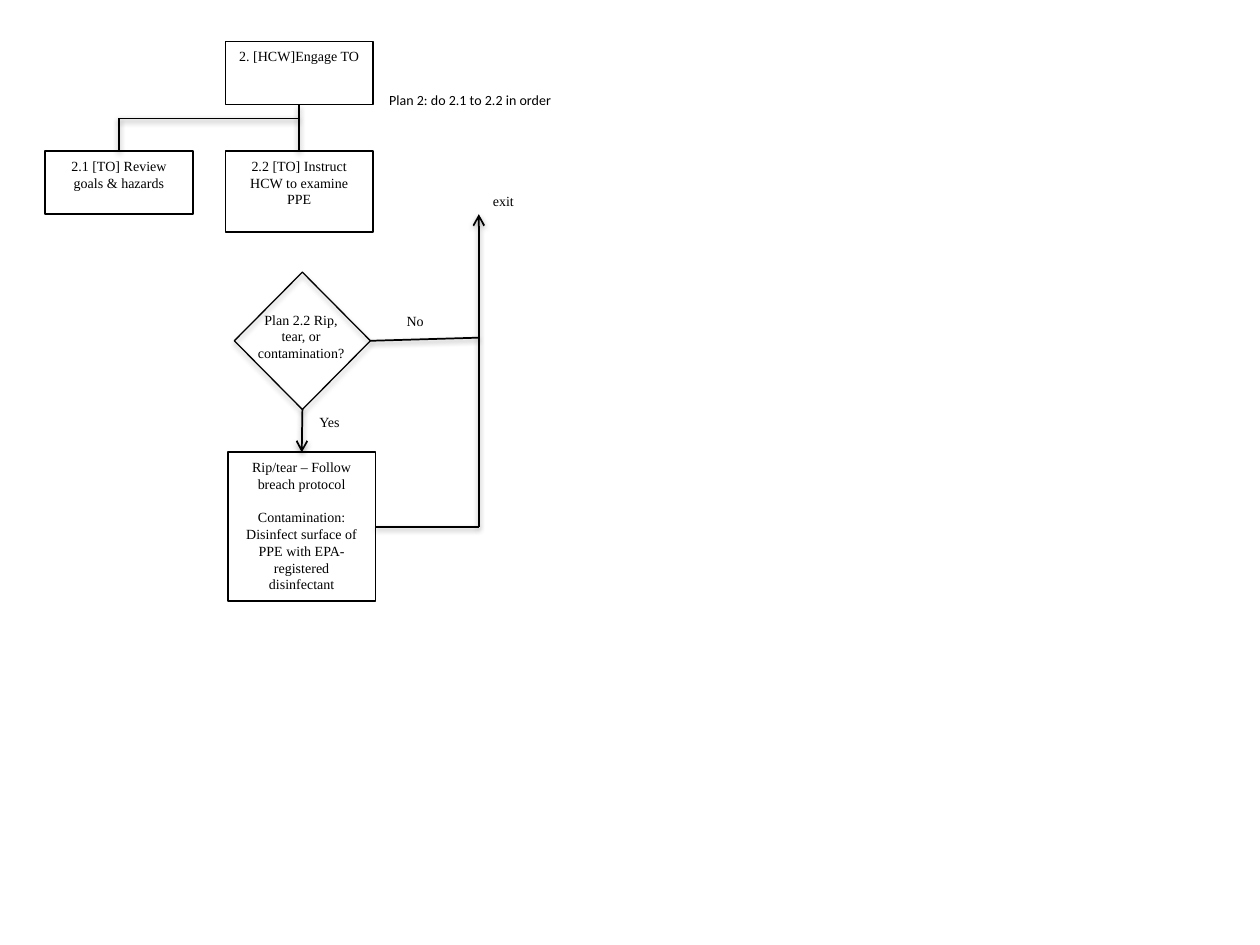
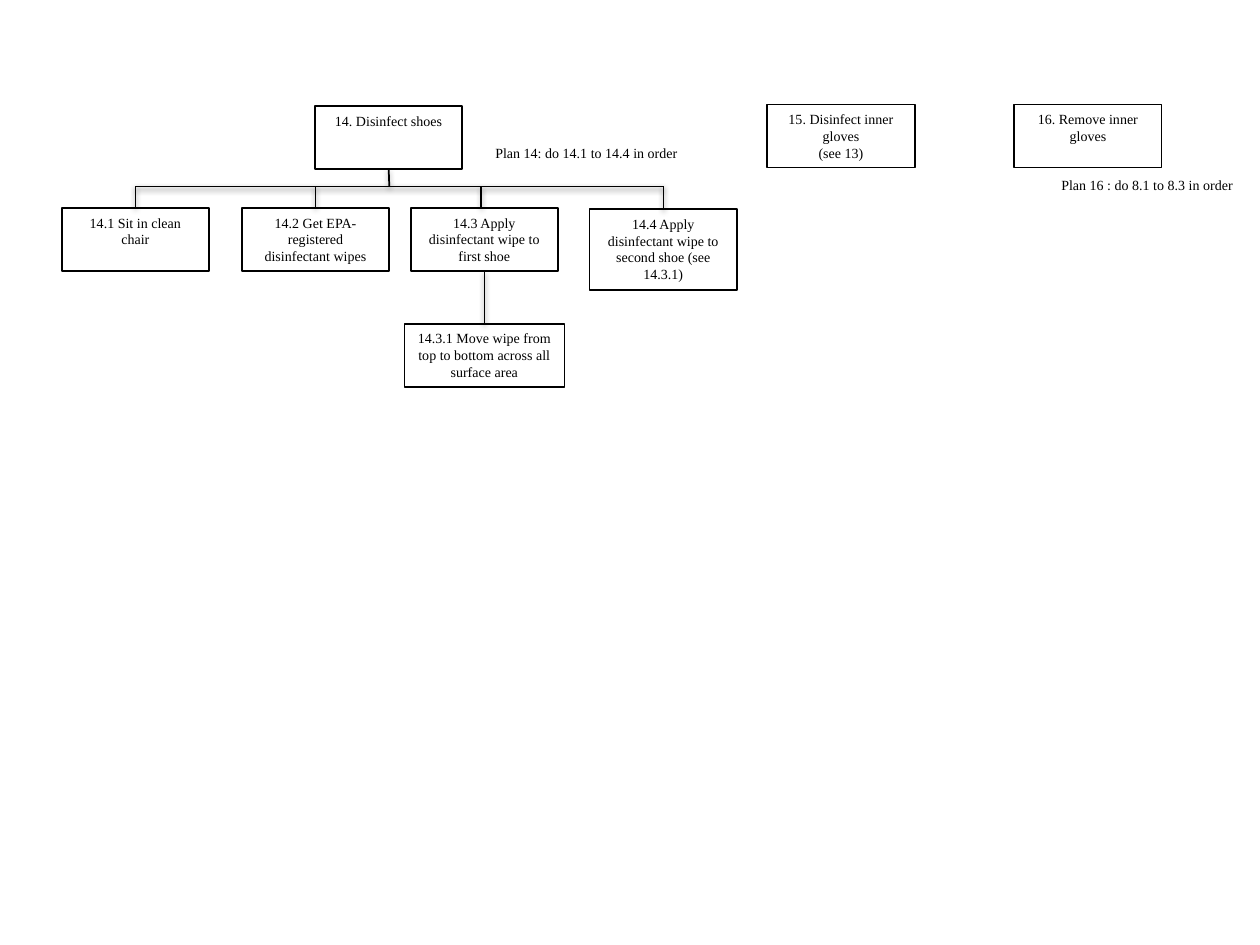
from lxml import etree
from pptx import Presentation
from pptx.dml.color import RGBColor
from pptx.enum import shapes, text
from pptx.oxml import ns
from pptx.util import Inches, Pt

INK = "000000"
PAPER = "FFFFFF"
SERIF = "Times New Roman"
SANS = "Calibri"
BOX_WIDTH = 1.17
BOX_HEIGHT = 0.5
TOP, LEFT, BOTTOM, RIGHT = range(4)


def color(value):
    return RGBColor.from_string(value)


def write(shape, content, font=SERIF, align=text.PP_ALIGN.CENTER, wrap=True,
          grow=True, anchor=text.MSO_ANCHOR.TOP, gap=0):
    frame = shape.text_frame
    frame.word_wrap = wrap
    frame.vertical_anchor = anchor
    if grow:
        frame.auto_size = text.MSO_AUTO_SIZE.SHAPE_TO_FIT_TEXT
    frame.text = content
    for index, paragraph in enumerate(frame.paragraphs):
        paragraph.alignment = align
        paragraph.font.name = font
        paragraph.font.size = Pt(8)
        paragraph.font.color.rgb = color(INK)
        if index and gap:
            paragraph.space_before = Pt(gap)


def add_shadow(shape, opacity=38, distance=1.6):
    properties = shape._element.spPr
    for old in properties.findall(ns.qn("a:effectLst")):
        properties.remove(old)
    effects = etree.SubElement(properties, ns.qn("a:effectLst"))
    shadow = etree.SubElement(effects, ns.qn("a:outerShdw"), blurRad=str(Pt(3.1)),
                              dist=str(Pt(distance)), dir="5400000", rotWithShape="0")
    tone = etree.SubElement(shadow, ns.qn("a:srgbClr"), val=INK)
    etree.SubElement(tone, ns.qn("a:alpha"), val=str(opacity * 1000))


def add_step(slide, content, left, top, width=BOX_WIDTH, height=BOX_HEIGHT, gap=0):
    step = slide.shapes.add_shape(shapes.MSO_SHAPE.RECTANGLE, Inches(left), Inches(top),
                                  Inches(width), Inches(height))
    step.shadow.inherit = False
    step.fill.solid()
    step.fill.fore_color.rgb = color(PAPER)
    step.line.color.rgb = color(INK)
    step.line.width = Pt(1)
    write(step, content, gap=gap)
    return step


def add_decision(slide, left, top, width, height):
    decision = slide.shapes.add_shape(shapes.MSO_SHAPE.DIAMOND, Inches(left), Inches(top),
                                      Inches(width), Inches(height))
    decision.fill.background()
    decision.line.color.rgb = color(INK)
    decision.line.width = Pt(0.75)
    add_shadow(decision, opacity=35, distance=1.8)
    return decision


def add_label(slide, content, left, top, width=0.39, height=0.23, **style):
    label = slide.shapes.add_textbox(Inches(left), Inches(top), Inches(width), Inches(height))
    write(label, content, **style)


def side_middle(shape, side):
    across = {LEFT: 0, RIGHT: 1}.get(side, 0.5)
    down = {TOP: 0, BOTTOM: 1}.get(side, 0.5)
    return (round((shape.left + shape.width * across) / Inches(1), 3),
            round((shape.top + shape.height * down) / Inches(1), 3))


def add_line(slide, start, end, begin_at=None, end_at=None, arrow=False):
    line = slide.shapes.add_connector(shapes.MSO_CONNECTOR.STRAIGHT,
                                      *(Inches(length) for length in (*start, *end)))
    if begin_at:
        line.begin_connect(*begin_at)
    if end_at:
        line.end_connect(*end_at)
    line.line.color.rgb = color(INK)
    line.line.width = Pt(1)
    if arrow:
        etree.SubElement(line.line._get_or_add_ln(), ns.qn("a:tailEnd"), type="arrow")
    add_shadow(line)


def join(slide, source, source_side, target, target_side, arrow=False):
    add_line(slide, side_middle(source, source_side), side_middle(target, target_side),
             (source, source_side), (target, target_side), arrow)


def drop_to(slide, step, rail_y):
    x, y = side_middle(step, TOP)
    add_line(slide, (x, rail_y), (x, y), end_at=(step, TOP))


def build_engage(slide):
    rail_y = 0.94
    exit_x = 3.8
    engage = add_step(slide, "2. [HCW]Engage TO", 1.79, 0.33)
    review = add_step(slide, "2.1 [TO] Review goals & hazards", 0.36, 1.2)
    instruct = add_step(slide, "2.2 [TO] Instruct HCW to examine PPE", 1.79, 1.2, height=0.64)
    join(slide, engage, BOTTOM, instruct, TOP)
    add_line(slide, (side_middle(review, TOP)[0], rail_y),
             (side_middle(instruct, TOP)[0], rail_y))
    drop_to(slide, review, rail_y)

    damage_check = add_decision(slide, 1.86, 2.16, 1.08, 1.09)
    add_label(slide, "Plan 2.2 Rip, tear, or contamination?", 1.9, 2.42, 0.98, 0.5)
    response = add_step(
        slide,
        "Rip/tear – Follow breach protocol\n"
        "Contamination: Disinfect surface of PPE with EPA-registered disinfectant",
        1.81, 3.59, height=1.18, gap=9.5)
    join(slide, damage_check, BOTTOM, response, TOP, arrow=True)
    response_side = side_middle(response, RIGHT)
    add_line(slide, (exit_x, response_side[1]), (exit_x, 1.7), arrow=True)
    add_line(slide, (exit_x, response_side[1]), response_side, end_at=(response, RIGHT))
    add_line(slide, side_middle(damage_check, RIGHT), (exit_x, 2.68),
             begin_at=(damage_check, RIGHT))

    add_label(slide, "No", 3.1, 2.43)
    add_label(slide, "Yes", 2.42, 3.23)
    add_label(slide, "Plan 2: do 2.1 to 2.2 in order", 2.99, 0.68, 2.52, 0.24,
              font=SANS, align=text.PP_ALIGN.LEFT)
    add_label(slide, "exit", exit_x, 1.48)


def build_disinfect(slide):
    rail_y = 1.48
    disinfect = add_step(slide, "14. Disinfect shoes", 2.5, 0.84)
    sit = add_step(slide, "14.1 Sit in clean chair", 0.49, 1.65)
    get_wipes = add_step(slide, "14.2 Get EPA-registered disinfectant wipes", 1.92, 1.65)
    first_shoe = add_step(slide, "14.3 Apply disinfectant wipe to first shoe", 3.26, 1.65)
    move_wipe = add_step(slide, "14.3.1 Move wipe from top to bottom across all surface area",
                         3.21, 2.57, width=1.27)
    second_shoe = add_step(slide, "14.4 Apply disinfectant wipe to second shoe (see 14.3.1)",
                           4.68, 1.66, height=0.64)
    add_step(slide, "15. Disinfect inner gloves\n(see 13)", 6.09, 0.83)
    add_step(slide, "16. Remove inner gloves", 8.05, 0.83)

    add_line(slide, (side_middle(sit, TOP)[0], rail_y),
             (side_middle(second_shoe, TOP)[0], rail_y))
    for step in (sit, get_wipes, second_shoe):
        drop_to(slide, step, rail_y)
    add_line(slide, (3.82, rail_y), (3.82, 1.65))
    add_line(slide, side_middle(disinfect, BOTTOM), (3.09, rail_y),
             begin_at=(disinfect, BOTTOM))
    join(slide, first_shoe, BOTTOM, move_wipe, TOP)

    add_label(slide, "Plan 14: do 14.1 to 14.4 in order", 3.82, 1.1, 1.67, 0.24, wrap=False)
    add_label(slide, "Plan 16 : do 8.1 to 8.3 in order", 8.31, 1.35, 1.59, 0.24, wrap=False)


def main():
    deck = Presentation()
    deck.slide_width, deck.slide_height = Inches(10), Inches(7.5)
    blank = deck.slide_layouts[6]
    for build in (build_engage, build_disinfect):
        build(deck.slides.add_slide(blank))
    deck.save("out.pptx")


if __name__ == "__main__":
    main()
